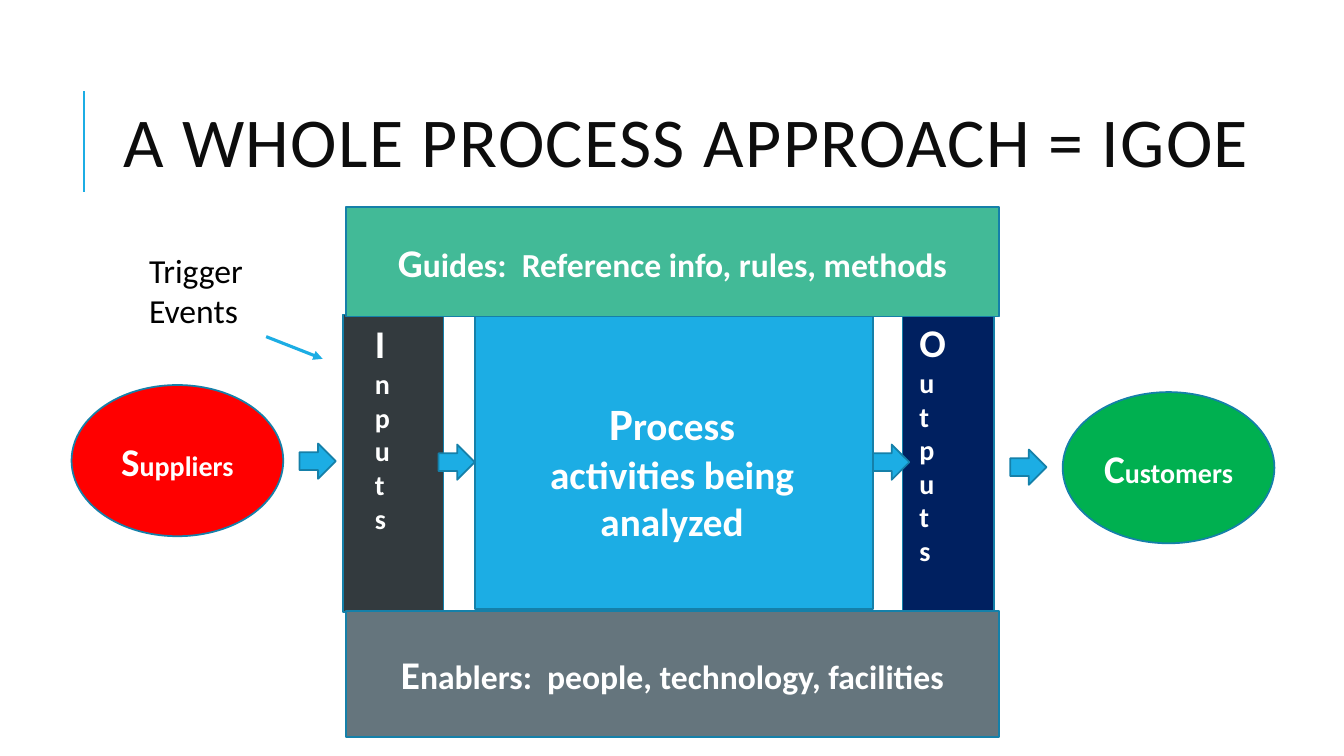
from pptx import Presentation
from pptx import util as u
from pptx.dml import color
from pptx.enum import shapes, text
from pptx.oxml import ns
from lxml import etree

FONT = "Calibri"
BLUE, EDGE, WHITE = "1CADE4", "1580A9", "FFFFFF"
KIND = shapes.MSO_SHAPE
MID, TOP = text.MSO_ANCHOR.MIDDLE, text.MSO_ANCHOR.TOP
LEFT, MIDST = text.PP_ALIGN.LEFT, text.PP_ALIGN.CENTER


def tint(code):
    return color.RGBColor.from_string(code)


def spot(*sizes):
    return [u.Inches(size) for size in sizes]


def apply(item, form):
    for name, value in form.items():
        setattr(item, name, value)


def write(shape, parts, hue=WHITE, bold=True, align=MIDST, anchor=MID,
          grow=False, stack=False):
    frame = shape.text_frame
    fit = text.MSO_AUTO_SIZE
    apply(frame, {"word_wrap": True, "vertical_anchor": anchor,
                  "auto_size": fit.SHAPE_TO_FIT_TEXT if grow else fit.NONE})
    if stack:
        frame._txBody.bodyPr.set("vert", "wordArtVert")
    para = frame.paragraphs[0]
    para.alignment = align
    for words, size in parts:
        run = para.add_run()
        run.text = words
        apply(run.font, {"name": FONT, "size": u.Pt(size), "bold": bold})
        run.font.color.rgb = tint(hue)
    return para


def block(slide, kind, box, fill, edge=EDGE):
    shape = slide.shapes.add_shape(kind, *spot(*box))
    shape.shadow.inherit = False
    shape.fill.solid()
    shape.fill.fore_color.rgb = tint(fill)
    if edge:
        shape.line.color.rgb = tint(edge)
        shape.line.width = u.Pt(1.25)
    else:
        shape.line.fill.background()
    return shape


def label(slide, box, parts, **form):
    shape = slide.shapes.add_textbox(*spot(*box))
    write(shape, parts, anchor=TOP, grow=True, **form)


def rule(slide, ends, width, head=False):
    line = slide.shapes.add_connector(
        shapes.MSO_CONNECTOR.STRAIGHT, *spot(*ends))
    line.line.color.rgb = tint(BLUE)
    line.line.width = u.Pt(width)
    if head:
        tail = etree.SubElement(line.line._get_or_add_ln(), ns.qn("a:tailEnd"))
        tail.set("type", "triangle")
    etree.SubElement(line._element.spPr, ns.qn("a:effectLst"))


def heading(slide, words):
    title = slide.shapes.title
    names = ("left", "top", "width", "height")
    apply(title, dict(zip(names, spot(1.12, 0.64, 11.52, 1.64))))
    para = write(title, [(words, 50)], "0D0D0D", False, LEFT)
    para.line_spacing = 0.8
    para.runs[0]._r.get_or_add_rPr().set("spc", "100")


def main():
    deck = Presentation()
    apply(deck, {"slide_width": u.Inches(13.33),
                 "slide_height": u.Inches(7.5)})
    slide = deck.slides.add_slide(deck.slide_layouts[5])

    rule(slide, (0.83, 1.9, 0.83, 0.9), 1.5)
    heading(slide, "A WHOLE PROCESS APPROACH = IGOE")

    block(slide, KIND.RECTANGLE, (4.71, 3.09, 3.95, 2.95), BLUE)
    label(slide, (5.19, 3.88, 2.95, 1.58),
          [("P", 32), ("rocess activities being analyzed", 28)])

    block(slide, KIND.RECTANGLE, (8.95, 3.11, 0.91, 2.95), "002060")
    label(slide, (9.02, 3.11, 1.16, 2.95), [("O", 28), ("utputs", 20)],
          align=LEFT, stack=True)

    block(slide, KIND.RECTANGLE, (3.4, 3.12, 1, 2.95), "333A3E")
    inputs = block(slide, KIND.RECTANGLE, (3.62, 3.12, 0.76, 2.95),
                   "333A3E", None)
    write(inputs, [("I", 28), ("nputs", 20)], align=LEFT, anchor=TOP,
          grow=True, stack=True)

    for left, top, fill, first, rest in (
            (0.71, 3.82, "FF0000", "S", "uppliers"),
            (10.54, 3.89, "00B050", "C", "ustomers")):
        party = block(slide, KIND.OVAL, (left, top, 2.1, 1.5), fill)
        write(party, [(first, 28), (rest, 20)])

    for left, top in ((2.97, 4.4), (4.35, 4.41), (8.66, 4.41), (10.02, 4.46)):
        block(slide, KIND.RIGHT_ARROW, (left, top, 0.36, 0.35), BLUE)

    for top, height, fill, first, rest in (
            (6.06, 1.25, "65757D", "E",
             "nablers:  people, technology, facilities"),
            (2.05, 1.09, "42BA97", "G",
             "uides:  Reference info, rules, methods")):
        band = block(slide, KIND.RECTANGLE, (3.43, top, 6.48, height), fill)
        write(band, [(first, 28), (rest, 24)])

    label(slide, (1.38, 2.43, 1.47, 0.91), [("Trigger Events", 24)],
          hue="000000", bold=False, align=LEFT)
    rule(slide, (2.64, 3.34, 3.2, 3.56), 2.25, head=True)

    deck.save("out.pptx")


if __name__ == "__main__":
    main()
